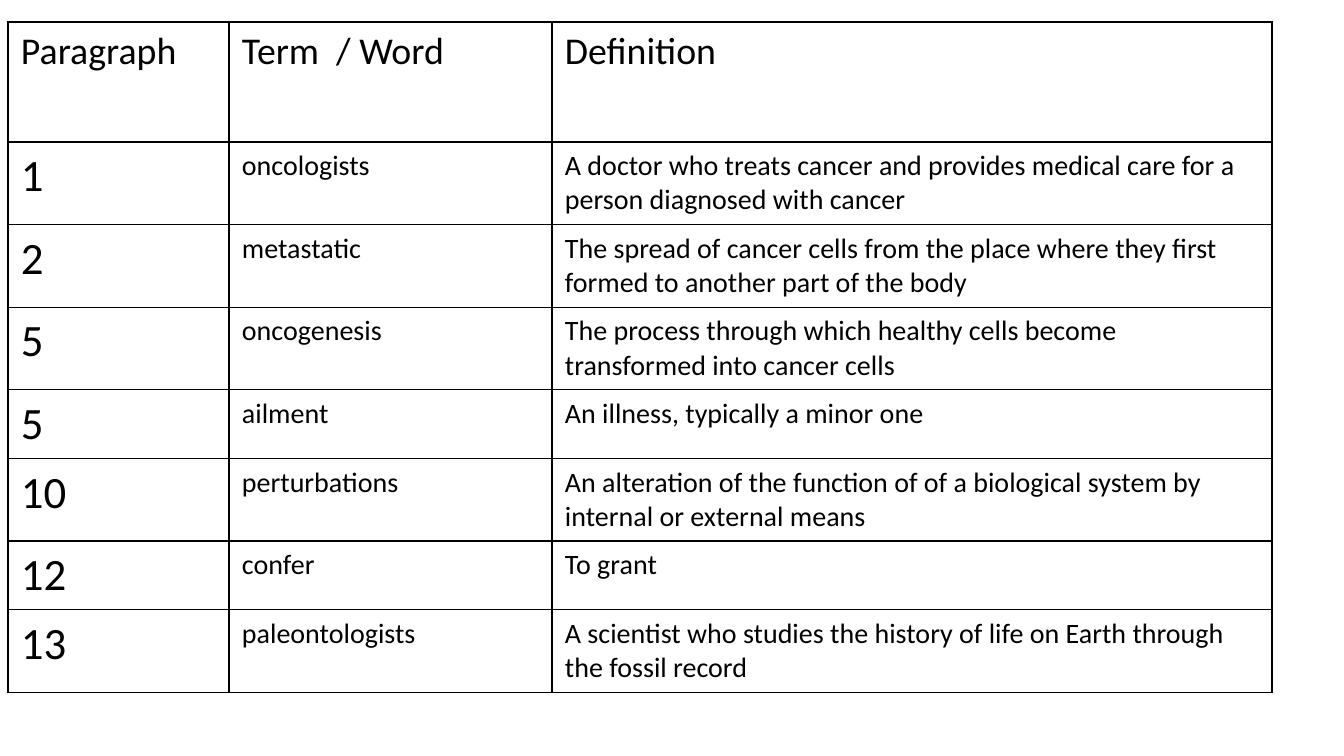
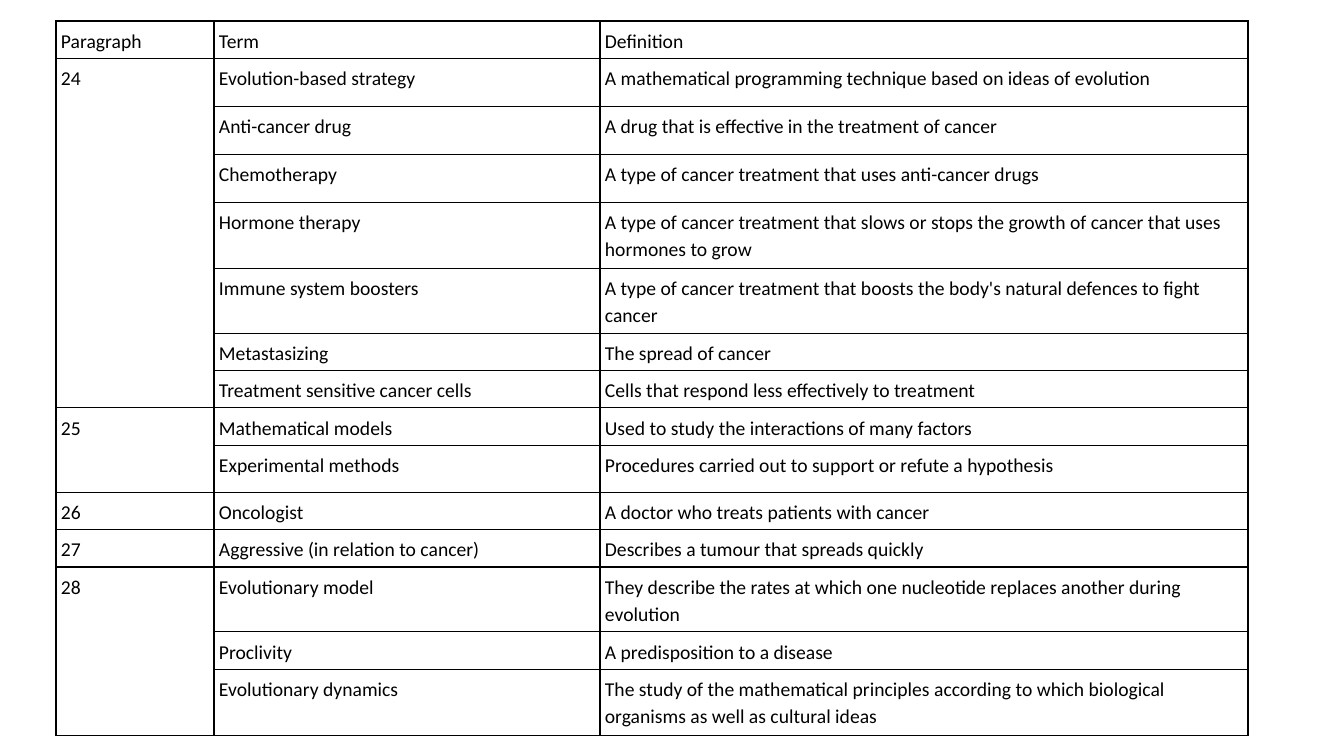
from lxml import etree
from pptx import Presentation
from pptx.dml.color import RGBColor
from pptx.oxml.ns import qn
from pptx.util import Emu, Pt

PX = 914400 / 100.8
FONT = "Calibri"
BLACK = "000000"
BORDER_WIDTH = Pt(1)
BORDER_SIDES = ("lnL", "lnR", "lnT", "lnB")

VOCABULARY = [
    ("Paragraph", "Term  / Word", "Definition"),
    ("1", "oncologists",
     "A doctor who treats cancer and provides medical care for a person diagnosed with cancer"),
    ("2", "metastatic",
     "The spread of cancer cells from the place where they first formed to another part of the body"),
    ("5", "oncogenesis",
     "The process through which healthy cells become transformed into cancer cells"),
    ("5", "ailment", "An illness, typically a minor one"),
    ("10", "perturbations",
     "An alteration of the function of of a biological system by internal or external means"),
    ("12", "confer", "To grant"),
    ("13", "paleontologists",
     "A scientist who studies the history of life on Earth through the fossil record"),
]
VOCABULARY_HEIGHTS = [120, 82, 82, 82, 68, 82, 68, 82]

# An empty first entry continues the paragraph number above it.
GLOSSARY = [
    ("Paragraph", "Term", "Definition"),
    ("24", "Evolution-based strategy",
     "A mathematical programming technique based on ideas of evolution"),
    ("", "Anti-cancer drug", "A drug that is effective in the treatment of cancer"),
    ("", "Chemotherapy", "A type of cancer treatment that uses anti-cancer drugs"),
    ("", "Hormone therapy",
     "A type of cancer treatment that slows or stops the growth of cancer that uses hormones to grow"),
    ("", "Immune system boosters",
     "A type of cancer treatment that boosts the body's natural defences to fight cancer"),
    ("", "Metastasizing", "The spread of cancer"),
    ("", "Treatment sensitive cancer cells", "Cells that respond less effectively to treatment"),
    ("25", "Mathematical models", "Used to study the interactions of many factors"),
    ("", "Experimental methods", "Procedures carried out to support or refute a hypothesis"),
    ("26", "Oncologist", "A doctor who treats patients with cancer"),
    ("27", "Aggressive (in relation to cancer)", "Describes a tumour that spreads quickly"),
    ("28", "Evolutionary model",
     "They describe the rates at which one nucleotide replaces another during evolution"),
    ("", "Proclivity", "A predisposition to a disease"),
    ("", "Evolutionary dynamics",
     "The study of the mathematical principles according to which biological organisms "
     "as well as cultural ideas"),
]
GLOSSARY_HEIGHTS = [36, 48, 48, 48, 66, 64, 37, 37, 37, 47, 37, 37, 64, 37, 66]


def px(length):
    return Emu(round(length * PX))


def color(value):
    return RGBColor.from_string(value)


def add_borders(cell):
    properties = cell._tc.get_or_add_tcPr()
    for side in BORDER_SIDES:
        line = etree.SubElement(properties, qn(f"a:{side}"), w=str(BORDER_WIDTH))
        fill = etree.SubElement(line, qn("a:solidFill"))
        etree.SubElement(fill, qn("a:srgbClr"), val=BLACK)


def style_cell(cell, insets):
    add_borders(cell)
    cell.fill.background()
    horizontal, vertical = map(px, insets)
    cell.margin_left = cell.margin_right = horizontal
    cell.margin_top = cell.margin_bottom = vertical


def write_cell(cell, text, size, line_spacing):
    para = cell.text_frame.paragraphs[0]
    para.line_spacing = line_spacing
    span = para.add_run()
    span.text = text
    span.font.name = FONT
    span.font.size = Pt(size)
    span.font.color.rgb = color(BLACK)


def merge_continued_rows(table, rows):
    starts = [index for index, row in enumerate(rows) if row[0]]
    for start, following in zip(starts, starts[1:] + [len(rows)]):
        if following - start > 1:
            table.cell(start, 0).merge(table.cell(following - 1, 0))


def add_term_table(page, corner, widths, heights, rows, insets, size_of, line_spacing):
    """Place a ruled table; size_of gives the text size for a row and column."""
    box = (*corner, sum(widths), sum(heights))
    table = page.shapes.add_table(len(rows), len(widths), *map(px, box)).table
    table.first_row = table.horz_banding = False
    for column, width in zip(table.columns, widths):
        column.width = px(width)
    for row, height in zip(table.rows, heights):
        row.height = px(height)
    for row_index, row in enumerate(rows):
        for column_index, text in enumerate(row):
            cell = table.cell(row_index, column_index)
            style_cell(cell, insets)
            if text:
                write_cell(cell, text, size_of(row_index, column_index), line_spacing)
    merge_continued_rows(table, rows)


def vocabulary_size(row, column):
    if row == 0:
        return 27
    return 32 if column == 0 else 20


def glossary_size(row, column):
    return 14


def add_page(deck):
    return deck.slides.add_slide(deck.slide_layouts[6])


def add_vocabulary_page(deck):
    add_term_table(add_page(deck), (8, 22), (221, 323, 720), VOCABULARY_HEIGHTS,
                   VOCABULARY, (13, 7), vocabulary_size, 1.0)


def add_glossary_page(deck):
    add_term_table(add_page(deck), (56, 21), (158, 386, 648), GLOSSARY_HEIGHTS,
                   GLOSSARY, (5, 5), glossary_size, 1.15)


def main():
    deck = Presentation()
    deck.slide_width, deck.slide_height = px(1344), px(756)
    add_vocabulary_page(deck)
    add_glossary_page(deck)
    deck.save("out.pptx")


if __name__ == "__main__":
    main()
